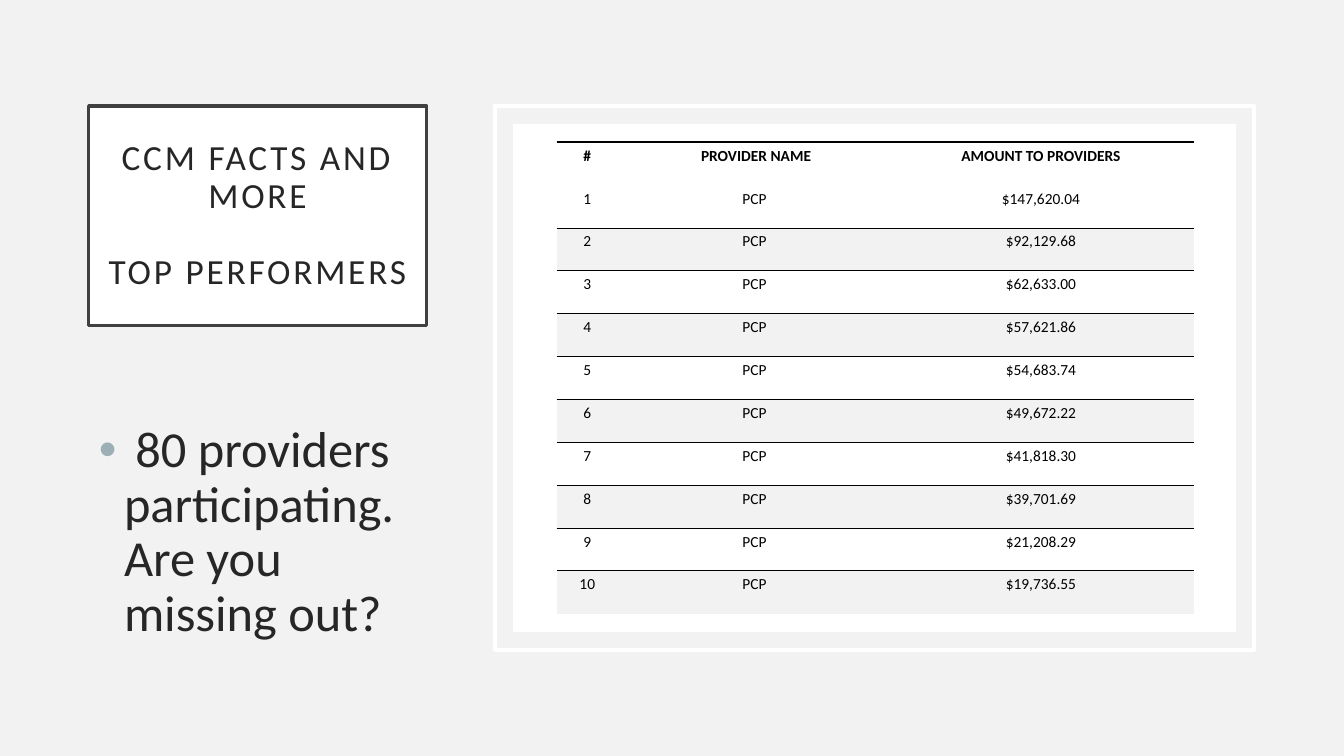
from lxml import etree
from pptx import Presentation
from pptx.dml.color import RGBColor
from pptx.enum import shapes, text
from pptx.oxml.ns import qn
from pptx.util import Inches, Pt

FONT = "Calibri"
WHITE = RGBColor(0xFF, 0xFF, 0xFF)
BLACK = RGBColor(0, 0, 0)
PALE = RGBColor(0xF2, 0xF2, 0xF2)
INK = RGBColor(0x26, 0x26, 0x26)
EDGE = RGBColor(0x40, 0x40, 0x40)
BULLET = RGBColor(0x9B, 0xAF, 0xB5)
PLAIN_STYLE = "{2D5ABB26-0587-4C30-8999-92F81FD0307C}"

HEADINGS = ["#", "PROVIDER NAME", "AMOUNT TO PROVIDERS"]
AMOUNTS = ["$147,620.04", "$92,129.68", "$62,633.00", "$57,621.86", "$54,683.74",
           "$49,672.22", "$41,818.30", "$39,701.69", "$21,208.29", "$19,736.55"]
COLUMN_WIDTHS = [0.67, 2.68, 2.97]
ROW_HEIGHT = 4.68 / 11


def apply(target, formats):
    for name, value in formats.items():
        setattr(target, name, value)


def place(shape, left, top, width, height):
    apply(shape, {"left": Inches(left), "top": Inches(top),
                  "width": Inches(width), "height": Inches(height)})


def paint(shape, fill=None, line=None):
    if fill is None:
        shape.fill.background()
    else:
        shape.fill.solid()
        shape.fill.fore_color.rgb = fill
    if line is None:
        shape.line.fill.background()
    else:
        shape.line.color.rgb = line
        shape.line.width = Pt(2.5)


def write(paragraph, words, size, color, bold=False):
    run = paragraph.add_run()
    run.text = words
    apply(run.font, {"name": FONT, "size": Pt(size), "bold": bold})
    run.font.color.rgb = color
    return run


def set_frame(frame, anchor, left, top, right, bottom):
    apply(frame, {"word_wrap": True, "auto_size": text.MSO_AUTO_SIZE.NONE,
                  "vertical_anchor": anchor,
                  "margin_left": Inches(left), "margin_top": Inches(top),
                  "margin_right": Inches(right), "margin_bottom": Inches(bottom)})


def add_title(title):
    place(title, 0.88, 1.05, 3.35, 2.18)
    paint(title, WHITE, EDGE)
    frame = title.text_frame
    set_frame(frame, text.MSO_ANCHOR.MIDDLE, 0.15, 0.2, 0.15, 0.2)
    heading, subheading = frame.paragraphs[0], frame.add_paragraph()
    for paragraph, words, gap in ((heading, "CCM FACTS AND MORE", 0),
                                  (subheading, "TOP PERFORMERS", 27)):
        apply(paragraph, {"alignment": text.PP_ALIGN.CENTER, "line_spacing": 0.9,
                          "space_before": Pt(gap)})
        run = write(paragraph, words, 25.2, INK)
        run.font._element.set("spc", "200")


def add_message(body):
    place(body, 0.88, 2.88, 3.35, 3.57)
    set_frame(body.text_frame, text.MSO_ANCHOR.TOP, 0.1, 1.33, 0.1, 0.05)
    message = body.text_frame.paragraphs[0]
    apply(message, {"line_spacing": 0.9, "space_before": Pt(0),
                    "alignment": text.PP_ALIGN.LEFT})
    write(message, " 80 providers participating. Are you missing out?", 36, INK)
    layout = message._p.get_or_add_pPr()
    layout.set("marL", str(Inches(0.25)))
    layout.set("indent", str(Inches(-0.25)))
    bullet_color = etree.SubElement(layout, qn("a:buClr"))
    etree.SubElement(bullet_color, qn("a:srgbClr"), val=str(BULLET))
    etree.SubElement(layout, qn("a:buFont"), typeface="Arial")
    etree.SubElement(layout, qn("a:buChar"), char="•")


def add_panel(slide, box, **colors):
    panel = slide.shapes.add_shape(shapes.MSO_SHAPE.RECTANGLE, *map(Inches, box))
    panel.shadow.inherit = False
    paint(panel, **colors)


def add_top_border(cell, points):
    border = etree.Element(qn("a:lnT"), w=str(Pt(points)))
    fill = etree.SubElement(border, qn("a:solidFill"))
    etree.SubElement(fill, qn("a:srgbClr"), val=str(BLACK))
    cell._tc.get_or_add_tcPr().insert(0, border)


def fill_cell(cell, words, row):
    apply(cell, {"vertical_anchor": text.MSO_ANCHOR.MIDDLE,
                 "margin_left": 0, "margin_top": Inches(0.02),
                 "margin_right": Inches(0.06), "margin_bottom": Inches(0.17)})
    paragraph = cell.text_frame.paragraphs[0]
    paragraph.alignment = text.PP_ALIGN.CENTER
    write(paragraph, words, 11, BLACK, bold=row == 0)
    shaded = row > 0 and row % 2 == 0
    if shaded:
        cell.fill.solid()
        cell.fill.fore_color.rgb = PALE
    else:
        cell.fill.background()
    if row == 0 or shaded:
        add_top_border(cell, 0.5 if shaded else 2.25)


def add_performers(slide):
    rows = [HEADINGS] + [[str(rank), "PCP ", amount]
                         for rank, amount in enumerate(AMOUNTS, 1)]
    table = slide.shapes.add_table(
        len(rows), len(HEADINGS), Inches(5.52), Inches(1.41),
        Inches(sum(COLUMN_WIDTHS)), Inches(ROW_HEIGHT * len(rows))).table
    table.horz_banding = False
    table._tbl.tblPr.find(qn("a:tableStyleId")).text = PLAIN_STYLE
    for column, width in zip(table.columns, COLUMN_WIDTHS):
        column.width = Inches(width)
    for row, values in enumerate(rows):
        table.rows[row].height = Inches(ROW_HEIGHT)
        for column, words in enumerate(values):
            fill_cell(table.cell(row, column), words, row)


def main():
    deck = Presentation()
    deck.slide_width, deck.slide_height = Inches(13.33), Inches(7.5)
    slide = deck.slides.add_slide(deck.slide_layouts[1])
    slide.background.fill.solid()
    slide.background.fill.fore_color.rgb = PALE
    add_title(slide.shapes.title)
    add_message(slide.placeholders[1])
    add_panel(slide, (4.91, 1.05, 7.53, 5.4), line=WHITE)
    add_panel(slide, (5.09, 1.23, 7.17, 5.04), fill=WHITE)
    add_performers(slide)
    deck.save("out.pptx")


if __name__ == "__main__":
    main()
